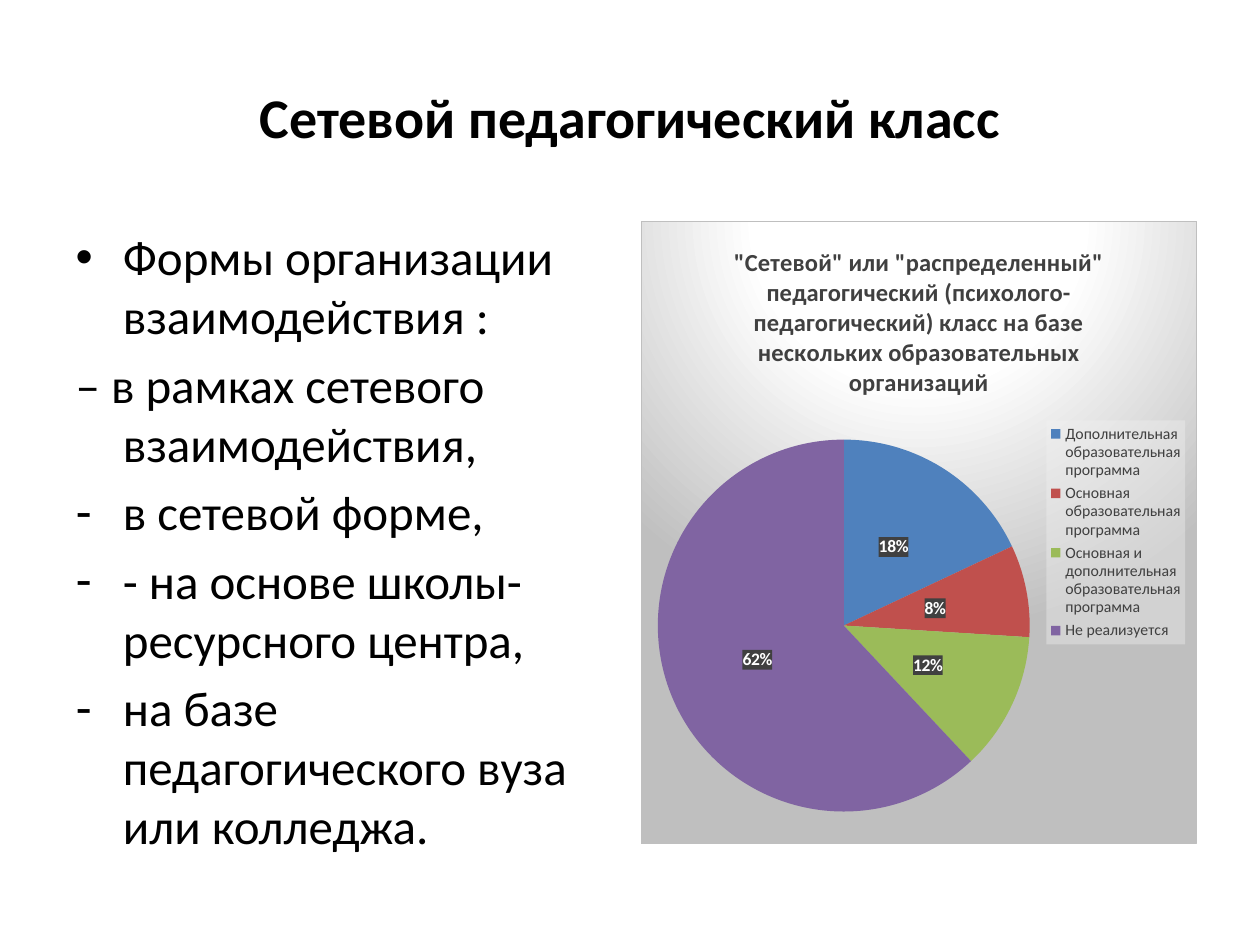
from dataclasses import dataclass

from lxml import etree
from pptx import Presentation
from pptx.chart.data import CategoryChartData
from pptx.dml.color import RGBColor
from pptx.enum.chart import XL_CHART_TYPE, XL_LABEL_POSITION, XL_LEGEND_POSITION
from pptx.enum.text import MSO_ANCHOR, PP_ALIGN
from pptx.oxml import parse_xml
from pptx.oxml.ns import nsdecls, qn
from pptx.util import Pt

PIE = XL_CHART_TYPE.PIE
LABEL_CENTER = XL_LABEL_POSITION.CENTER
LEGEND_RIGHT = XL_LEGEND_POSITION.RIGHT
MIDDLE = MSO_ANCHOR.MIDDLE
CENTER = PP_ALIGN.CENTER
TITLE_AND_CONTENT = 1


@dataclass(frozen=True)
class Theme:
    """Font, colours and type sizes of the slide."""
    font: str = "Calibri"
    ink: str = "000000"
    soft_ink: str = "404040"
    light: str = "FFFFFF"
    legend_back: str = "F2F2F2"
    edge: str = "BFBFBF"
    slices: tuple = ("4F81BD", "C0504D", "9BBB59", "8064A2")
    heading: int = 32
    body: int = 28
    chart_title: int = 14
    label: int = 10
    legend: int = 9


THEME = Theme()
HEADING = "Сетевой педагогический класс"
FORMS = [
    ("•", "Формы организации взаимодействия :"),
    (None, "– в рамках сетевого взаимодействия,"),
    ("-", "в сетевой форме,"),
    ("-", "- на основе школы-ресурсного центра,"),
    ("-", "на базе педагогического вуза или колледжа."),
]
CHART_TITLE = ('"Сетевой" или "распределенный" педагогический '
               "(психолого-педагогический) класс на базе нескольких "
               "образовательных организаций")
SHARES = {
    "Дополнительная образовательная программа": 18,
    "Основная образовательная программа": 8,
    "Основная и дополнительная образовательная программа": 12,
    "Не реализуется": 62,
}


def style_font(font, size, color, bold=False):
    """Apply the theme font with a size, colour and weight."""
    formats = {"name": THEME.font, "size": Pt(size), "bold": bold}
    for attribute, value in formats.items():
        setattr(font, attribute, value)
    font.color.rgb = RGBColor.from_string(color)


def place(shape, box):
    """Move a shape to a box given in points."""
    for attribute, value in zip(("left", "top", "width", "height"), box):
        setattr(shape, attribute, Pt(value))


def translucent_fill(color, percent):
    """Return chart shape properties with a partly transparent fill."""
    return parse_xml(
        f'<c:spPr {nsdecls("c", "a")}><a:solidFill><a:srgbClr val="{color}">'
        f'<a:alpha val="{percent * 1000}"/></a:srgbClr></a:solidFill></c:spPr>')


def radial_fill():
    """Return the chart background: a radial gradient with a thin edge."""
    stops = "".join(
        f'<a:gs pos="{position * 1000}"><a:srgbClr val="{color}"/></a:gs>'
        for position, color in ((0, THEME.light), (39, THEME.light), (100, THEME.edge)))
    return parse_xml(
        f'<c:spPr {nsdecls("c", "a")}><a:gradFill><a:gsLst>{stops}</a:gsLst>'
        '<a:path path="circle"><a:fillToRect l="50000" t="-80000" r="50000" b="180000"/>'
        f'</a:path></a:gradFill><a:ln w="{Pt(0.75)}"><a:solidFill>'
        f'<a:srgbClr val="{THEME.edge}"/></a:solidFill></a:ln></c:spPr>')


def set_layout(parent, index, fractions, inner=False):
    """Fix a chart part's place as fractions of the chart area."""
    for old in parent.findall(qn("c:layout")):
        parent.remove(old)
    layout = etree.Element(qn("c:layout"))
    manual = etree.SubElement(layout, qn("c:manualLayout"))
    settings = [("layoutTarget", "inner")] if inner else []
    settings += [("xMode", "edge"), ("yMode", "edge"), *zip("xywh", fractions)]
    for tag, value in settings:
        etree.SubElement(manual, qn(f"c:{tag}")).set("val", str(value))
    parent.insert(index, layout)


def add_heading(slide, box):
    """Fill the title placeholder."""
    heading = slide.shapes.title
    place(heading, box)
    heading.text_frame.vertical_anchor = MIDDLE
    paragraph = heading.text_frame.paragraphs[0]
    paragraph.alignment = CENTER
    run = paragraph.add_run()
    run.text = HEADING
    style_font(run.font, THEME.heading, THEME.ink, True)


def add_forms(slide, box):
    """Fill the body placeholder with the list of forms."""
    forms = slide.placeholders[1]
    place(forms, box)
    frame = forms.text_frame
    for number, (bullet, text) in enumerate(FORMS):
        paragraph = frame.add_paragraph() if number else frame.paragraphs[0]
        run = paragraph.add_run()
        run.text = text
        style_font(run.font, THEME.body, THEME.ink)
        properties = paragraph._p.get_or_add_pPr()
        if bullet:
            etree.SubElement(properties, qn("a:buChar")).set("char", bullet)
        else:
            etree.SubElement(properties, qn("a:buNone"))


def add_shares(slide, box):
    """Add the pie chart of programme shares."""
    data = CategoryChartData()
    data.categories = list(SHARES)
    data.add_series("Series 1", list(SHARES.values()))
    chart = slide.shapes.add_chart(PIE, *map(Pt, box), data).chart
    style_font(chart.font, THEME.label, THEME.ink)
    chart.element.find(qn("c:chart")).addnext(radial_fill())

    title = chart.chart_title.text_frame
    title.text = CHART_TITLE
    style_font(title.paragraphs[0].runs[0].font, THEME.chart_title, THEME.soft_ink, True)
    chart.chart_title.include_in_layout = False

    pie = chart.plots[0]
    pie.vary_by_categories = True
    set_layout(chart.element.find(f".//{qn('c:plotArea')}"), 0,
               (0.03, 0.35, 0.67, 0.6), inner=True)
    series = pie.series[0]
    for number, color in enumerate(THEME.slices):
        fill = series.points[number].format.fill
        fill.solid()
        fill.fore_color.rgb = RGBColor.from_string(color)

    labels = series.data_labels
    formats = {"show_percentage": True, "show_value": False, "position": LABEL_CENTER,
               "number_format": "0%", "number_format_is_linked": False}
    for attribute, value in formats.items():
        setattr(labels, attribute, value)
    style_font(labels.font, THEME.label, THEME.light, True)

    chart.has_legend = True
    legend = chart.legend
    legend.position = LEGEND_RIGHT
    legend.include_in_layout = False
    style_font(legend.font, THEME.legend, THEME.soft_ink)
    set_layout(legend._element, 1, (0.73, 0.32, 0.25, 0.36))

    for part, color, percent in ((labels, THEME.soft_ink, 75),
                                 (legend, THEME.legend_back, 39)):
        part._element.find(qn("c:txPr")).addprevious(translucent_fill(color, percent))


def main():
    """Build and save the slide."""
    deck = Presentation()
    deck.slide_width, deck.slide_height = Pt(720), Pt(540)
    slide = deck.slides.add_slide(deck.slide_layouts[TITLE_AND_CONTENT])
    margin, top, width, height = 36, 126, 318, 356.4
    add_heading(slide, (margin, 21.6, 720 - 2 * margin, 90))
    add_forms(slide, (margin, top, width, height))
    add_shares(slide, (720 - margin - width, top, width, height))
    deck.save("out.pptx")


if __name__ == "__main__":
    main()
